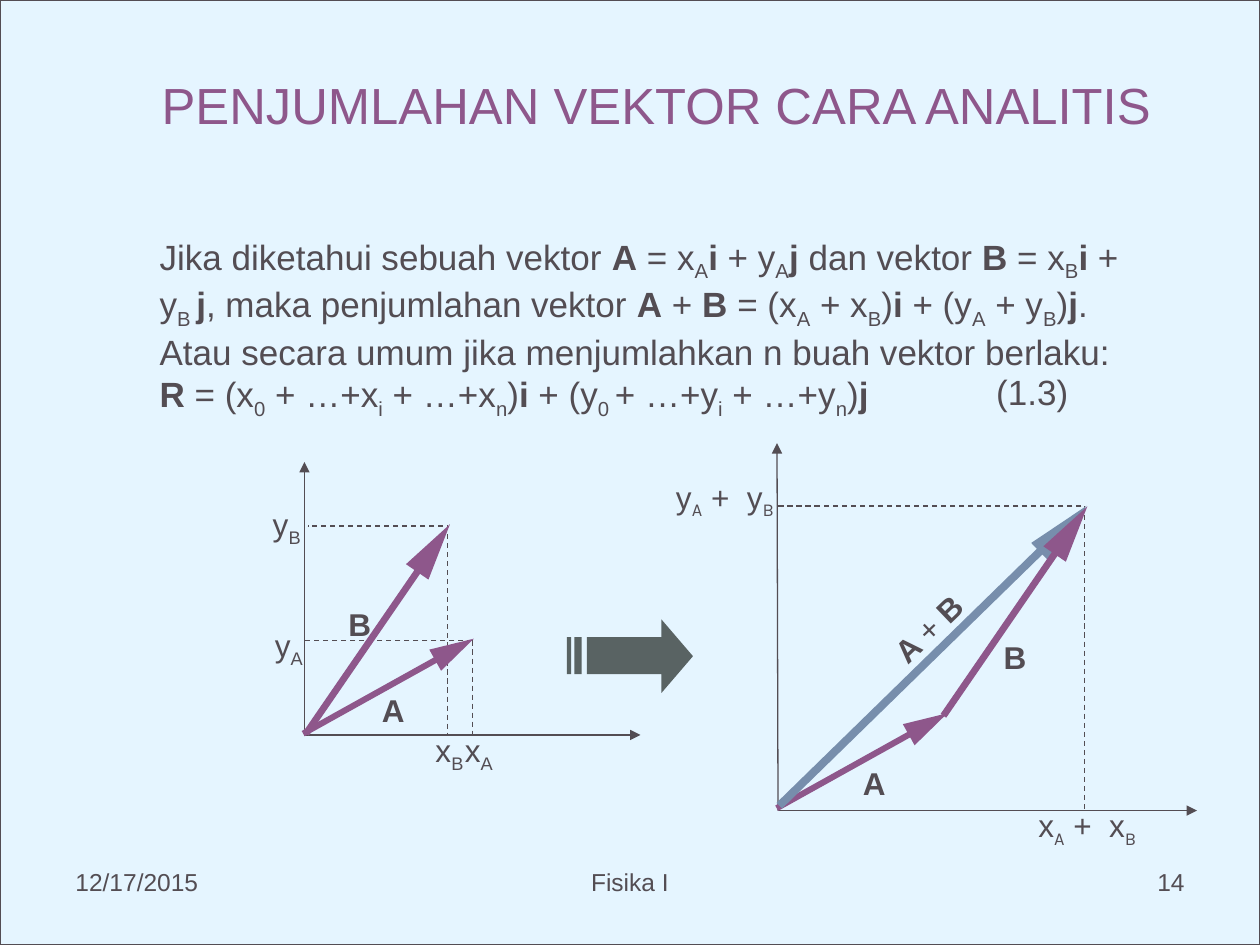
from dataclasses import dataclass
from itertools import cycle
from typing import Optional

from pptx import Presentation
from pptx.dml.color import RGBColor
from pptx.enum.dml import MSO_LINE
from pptx.enum.shapes import MSO_CONNECTOR, MSO_SHAPE as Preset
from pptx.enum.text import MSO_ANCHOR as Anchor, MSO_AUTO_SIZE as AutoSize, PP_ALIGN as Align
from pptx.oxml.ns import qn
from pptx.util import Inches, Pt
from lxml.etree import SubElement

COLORS = {"paper": "E5F5FF", "ink": "534D53", "plum": "8E578B", "steel": "778EAC", "slate": "596363"}
COLUMNS, ROWS = 120, 90  # a grid of twelve cells to the inch
CELL = Inches(10) / COLUMNS


@dataclass
class Label:
    text: str  # *bold*, _subscript_
    left: float
    top: float
    width: float = 7
    height: float = 4.45
    size: int = 18
    align: Align = Align.LEFT
    rotation: float = 0
    subscript_font: Optional[str] = None


@dataclass
class Line:
    start: tuple[float, float]
    end: tuple[float, float]
    is_axis: bool = False


@dataclass
class Vector:
    left: float
    top: float
    width: float
    height: float
    rotation: float
    shaft: float
    head: float
    color: str = "plum"


def grid(*cells: float) -> list[int]:
    return [round(cell * CELL) for cell in cells]


def rgb(name: str) -> RGBColor:
    return RGBColor.from_string(COLORS[name])


def add_runs(paragraph, text: str, subscript_font: Optional[str] = None) -> None:
    for bold_part, bold in zip(text.split("*"), cycle((False, True))):
        for part, lowered in zip(bold_part.split("_"), cycle((False, True))):
            if not part:
                continue
            run = paragraph.add_run()
            run.text = part
            if bold:
                run.font.bold = True
            if lowered:
                run.font._element.set("baseline", "-25000")
                if subscript_font:
                    run.font.name = subscript_font


def format_paragraph(paragraph, size: int, color: str, align: Align) -> None:
    paragraph.alignment = align
    paragraph.font.name = "Arial"
    paragraph.font.size = Pt(size)
    paragraph.font.color.rgb = rgb(color)


def add_label(slide, label: Label) -> None:
    box = slide.shapes.add_textbox(*grid(label.left, label.top, label.width, label.height))
    box.rotation = label.rotation
    box.text_frame.word_wrap = True
    paragraph = box.text_frame.paragraphs[0]
    add_runs(paragraph, label.text, label.subscript_font)
    format_paragraph(paragraph, label.size, "ink", label.align)


def add_line(slide, line: Line) -> None:
    connector = slide.shapes.add_connector(MSO_CONNECTOR.STRAIGHT, *grid(*line.start, *line.end))
    connector.line.color.rgb = rgb("ink")
    connector.line.width = Pt(0.75)
    if line.is_axis:
        SubElement(connector.line._get_or_add_ln(), qn("a:tailEnd"), type="triangle")
    else:
        connector.line.dash_style = MSO_LINE.DASH
    SubElement(connector._element.spPr, qn("a:effectLst"))


def paint(shape, color: str) -> None:
    shape.shadow.inherit = False
    shape.fill.solid()
    shape.fill.fore_color.rgb = rgb(color)
    shape.line.fill.background()


def add_vector(slide, vector: Vector) -> None:
    arrow = slide.shapes.add_shape(
        Preset.LEFT_ARROW, *grid(vector.left, vector.top, vector.width, vector.height))
    arrow.adjustments[0] = vector.shaft
    arrow.adjustments[1] = vector.head
    arrow.rotation = vector.rotation
    paint(arrow, vector.color)


def add_striped_arrow(slide) -> None:
    top, bottom = 60.7, 64.2
    stripes = [[(left, top), (left, bottom), (right, bottom), (right, top)]
               for left, right in ((54.7, 55.4), (54, 54.4))]
    head = [(63, 59), (63, top), (55.9, top), (55.9, bottom), (63, bottom), (63, 66), (66, 62.5)]
    builder = slide.shapes.build_freeform(*head[0], scale=CELL)
    # Build in fine units so that fractions of a cell survive
    builder = slide.shapes.build_freeform(*grid(*head[0]))
    builder.add_line_segments([grid(*point) for point in head[1:]], close=True)
    for stripe in stripes:
        builder.move_to(*grid(*stripe[0]))
        builder.add_line_segments([grid(*point) for point in stripe[1:]], close=True)
    paint(builder.convert_to_shape(), "slate")


def place(shape, *cells: float) -> None:
    shape.left, shape.top, shape.width, shape.height = grid(*cells)


TITLE = "PENJUMLAHAN VEKTOR CARA ANALITIS"
BODY = [
    "Jika diketahui sebuah vektor *A* = x_A_*i* + y_A_*j *dan vektor *B* = x_B_*i* + y_B _*j*, "
    "maka penjumlahan vektor *A* + *B* = (x_A_ + x_B_)*i* + (y_A_ + y_B_)*j*. "
    "Atau secara umum jika menjumlahkan n buah vektor berlaku:",
    "*R* = (x_0_ + …+x_i_ + …+x_n_)*i* + (y_0 _+ …+y_i_ + …+y_n_)*j*",
]
LINES = [
    # Separate vectors
    Line((29, 70), (29, 44), True), Line((29, 70), (61, 70), True),
    Line((45, 61), (45, 70)), Line((45, 61), (29, 61)),
    Line((42.6, 50), (42.6, 70)), Line((42.2, 50.1), (29.3, 50.1)),
    # Vector sum
    Line((74.1, 77.2), (74, 42.2), True), Line((74.1, 77.2), (114, 77.2), True),
    Line((103.3, 48.2), (103.3, 77.2)), Line((103, 48.2), (74, 48.2)),
]
VECTOR_A = dict(width=18.6, height=2.3, rotation=150.9, shaft=0.25, head=1.83)
VECTOR_B = dict(width=24.2, height=2.6, rotation=124.5, shaft=0.25, head=2.12)
VECTORS = [
    Vector(27.7, 64.2, **VECTOR_A),
    Vector(23.9, 58.6, **VECTOR_B),
    Vector(72.8, 71.3, **VECTOR_A),
    Vector(68.4, 61.3, 40.9, 2.3, 135.7, 0.33, 2.72, "steel"),
    Vector(84.6, 56.9, **VECTOR_B),
]
LABELS = [
    Label("x_A_", 43.1, 69), Label("x_B_", 40.3, 69),
    Label("y_A_", 25, 59), Label("y_B_", 24.8, 47.5),
    Label("*A*", 35.2, 65.2, 5), Label("*B*", 32, 57, 5),
    Label("x_A_ +  x_B_", 97.7, 76.2, 14, subscript_font="Karla"),
    Label("y_A_ +  y_B_", 63.2, 44.9, 14, subscript_font="Karla"),
    Label("*A *+* B*", 83, 56.8, 12, rotation=316.1),
    Label("*A*", 81, 72.2, 5), Label("*B*", 94.4, 60.2, 5),
    Label("(1.3)", 93.7, 34.7, 11, 5.2, 20),
    # Footer
    Label("12/17/2015", 6, 82, 28, 6.25, 14),
    Label("Fisika I", 41, 82, 38, 6.25, 14, Align.CENTER),
    Label("14", 86, 82, 28, 6.25, 14, Align.RIGHT),
]


def main() -> None:
    presentation = Presentation()
    presentation.slide_width, presentation.slide_height = grid(COLUMNS, ROWS)
    slide = presentation.slides.add_slide(presentation.slide_layouts[1])
    title, body = slide.placeholders

    # Backdrop, behind the placeholders
    backdrop = slide.shapes.add_shape(Preset.RECTANGLE, *grid(0, 0, COLUMNS, ROWS))
    paint(backdrop, "paper")
    backdrop.line.color.rgb = rgb("ink")
    backdrop.line.width = Pt(0.75)
    title._element.addprevious(backdrop._element)

    # Title and explanation
    place(title, 10, 3.7, 105.1, 12.4)
    title.text_frame.text = TITLE
    title.text_frame.vertical_anchor = Anchor.MIDDLE
    format_paragraph(title.text_frame.paragraphs[0], 29, "plum", Align.CENTER)
    place(body, 14, 21.8, 97, 17.4)
    frame = body.text_frame
    frame.auto_size = AutoSize.NONE
    for index, text in enumerate(BODY):
        paragraph = frame.add_paragraph() if index else frame.paragraphs[0]
        add_runs(paragraph, text)
        paragraph.space_before = Pt(0)
        properties = paragraph._p.get_or_add_pPr()
        properties.set("marL", "0")
        properties.set("indent", "0")
        SubElement(properties, qn("a:buNone"))
        format_paragraph(paragraph, 20, "ink", Align.LEFT)

    # Diagrams and labels
    for line in LINES:
        add_line(slide, line)
    for vector in VECTORS:
        add_vector(slide, vector)
    add_striped_arrow(slide)
    for label in LABELS:
        add_label(slide, label)
    presentation.save("out.pptx")


if __name__ == "__main__":
    main()
